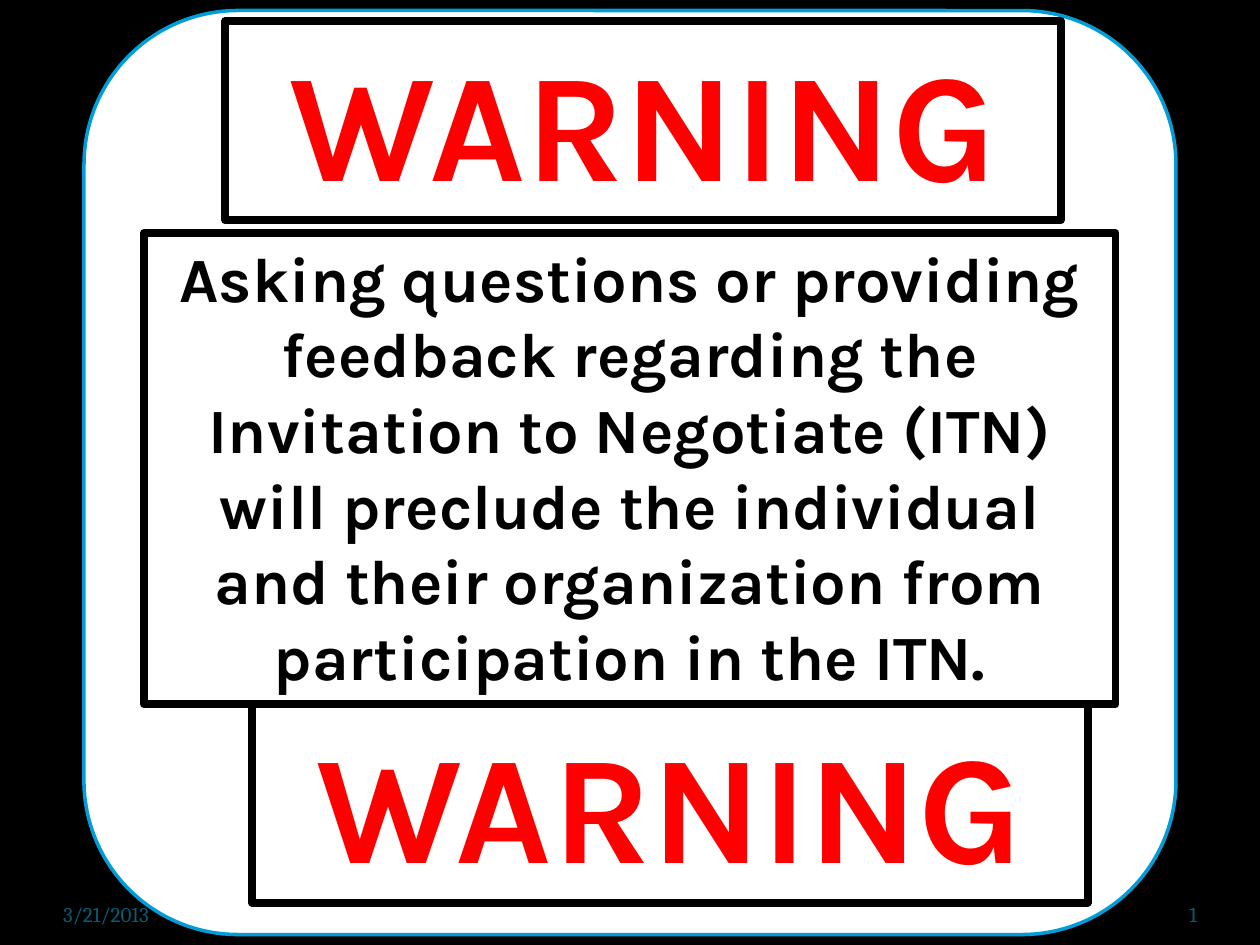
from lxml.etree import SubElement
from pptx import Presentation
from pptx.dml.color import RGBColor
from pptx.enum.shapes import MSO_SHAPE
from pptx.enum.text import MSO_ANCHOR, MSO_AUTO_SIZE, PP_ALIGN
from pptx.oxml.ns import qn
from pptx.util import Pt

WIDTH, HEIGHT = 720, 540
BLACK, WHITE, RED, BLUE, TEAL = "000000", "FFFFFF", "FF0000", "009DD9", "045D75"

# shape, (left, top, width, height), fill, line
PANELS = [
    (MSO_SHAPE.RECTANGLE, (0, 0, WIDTH, HEIGHT), BLACK, None),
    (MSO_SHAPE.ROUNDED_RECTANGLE, (48, 6, 624, 528), WHITE, BLUE),
]

WARNING = "WARNING"
MESSAGE = ("Asking questions or providing feedback regarding the Invitation to "
           "Negotiate (ITN) will preclude the individual and their organization "
           "from participation in the ITN.")

# text, (left, top, width, height), size, colour, wrap, outline width
NOTICES = [
    (WARNING, (128.7, 12, 477.5, 113.8), 88, RED, False, 1.45),
    (MESSAGE, (82.2, 133.2, 555.3, 269.3), 36, BLACK, True, None),
    (WARNING, (144, 402, 477.5, 113.8), 88, RED, False, 1.45),
]

# text, (left, top, width, height), alignment
FOOTERS = [
    ("3/21/2013", (36, 500.5, 168, 28.8), PP_ALIGN.LEFT),
    ("1", (624, 500.5, 60, 28.8), PP_ALIGN.RIGHT),
]


def rgb(color):
    return RGBColor.from_string(color)


def points(box):
    return [Pt(v) for v in box]


def add_panel(slide, kind, box, fill, line):
    s = slide.shapes.add_shape(kind, *points(box))
    s.shadow.inherit = False
    s.fill.solid()
    s.fill.fore_color.rgb = rgb(fill)
    if line:
        s.line.color.rgb = rgb(line)
        s.line.width = Pt(2)
    else:
        s.line.fill.background()


def add_text(slide, text, box, font, size, color, align, bold=False):
    s = slide.shapes.add_textbox(*points(box))
    tf = s.text_frame
    tf.text = text
    tf.word_wrap = True
    p = tf.paragraphs[0]
    p.alignment = align
    r = p.runs[0]
    r.font.name = font
    r.font.size = Pt(size)
    r.font.bold = bold
    r.font.color.rgb = rgb(color)
    return s


def outline_text(r, color, width):
    """Draw a solid line around the letters of a run."""
    rPr = r.font._element
    ln = SubElement(rPr, qn("a:ln"), w=str(Pt(width)))
    SubElement(SubElement(ln, qn("a:solidFill")), qn("a:srgbClr"), val=color)
    rPr.insert(0, ln)


def add_notice(slide, text, box, size, color, wrap, outline):
    s = add_text(slide, text, box, "Karla", size, color, PP_ALIGN.CENTER, True)
    s.line.color.rgb = rgb(BLACK)
    s.line.width = Pt(4.5)
    tf = s.text_frame
    tf.word_wrap = wrap
    tf.auto_size = MSO_AUTO_SIZE.SHAPE_TO_FIT_TEXT
    if outline:
        outline_text(tf.paragraphs[0].runs[0], color, outline)


def add_footer(slide, text, box, align):
    tf = add_text(slide, text, box, "Cambria", 12, TEAL, align).text_frame
    tf.vertical_anchor = MSO_ANCHOR.BOTTOM
    tf.margin_left = tf.margin_right = tf.margin_top = tf.margin_bottom = 0


def main():
    prs = Presentation()
    prs.slide_width, prs.slide_height = Pt(WIDTH), Pt(HEIGHT)
    slide = prs.slides.add_slide(prs.slide_layouts[6])
    for panel in PANELS:
        add_panel(slide, *panel)
    for notice in NOTICES:
        add_notice(slide, *notice)
    for footer in FOOTERS:
        add_footer(slide, *footer)
    prs.save("out.pptx")


if __name__ == "__main__":
    main()
